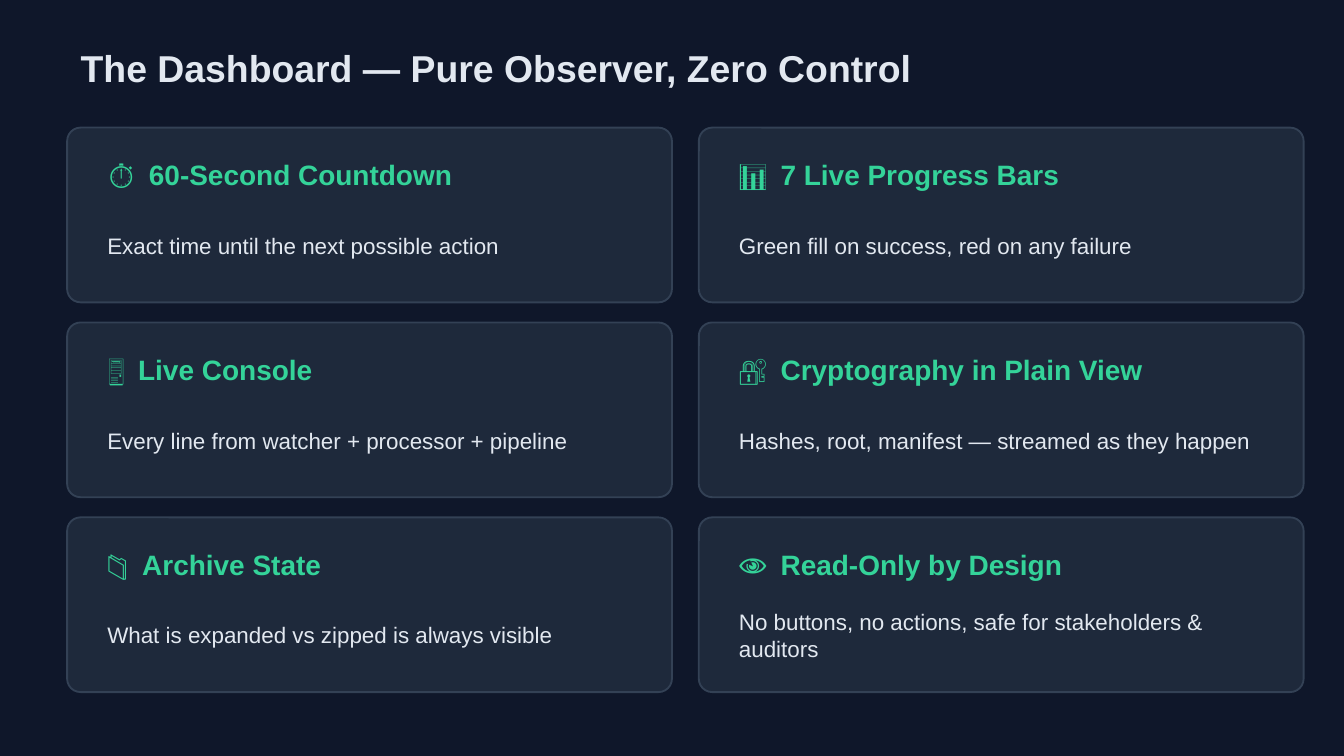
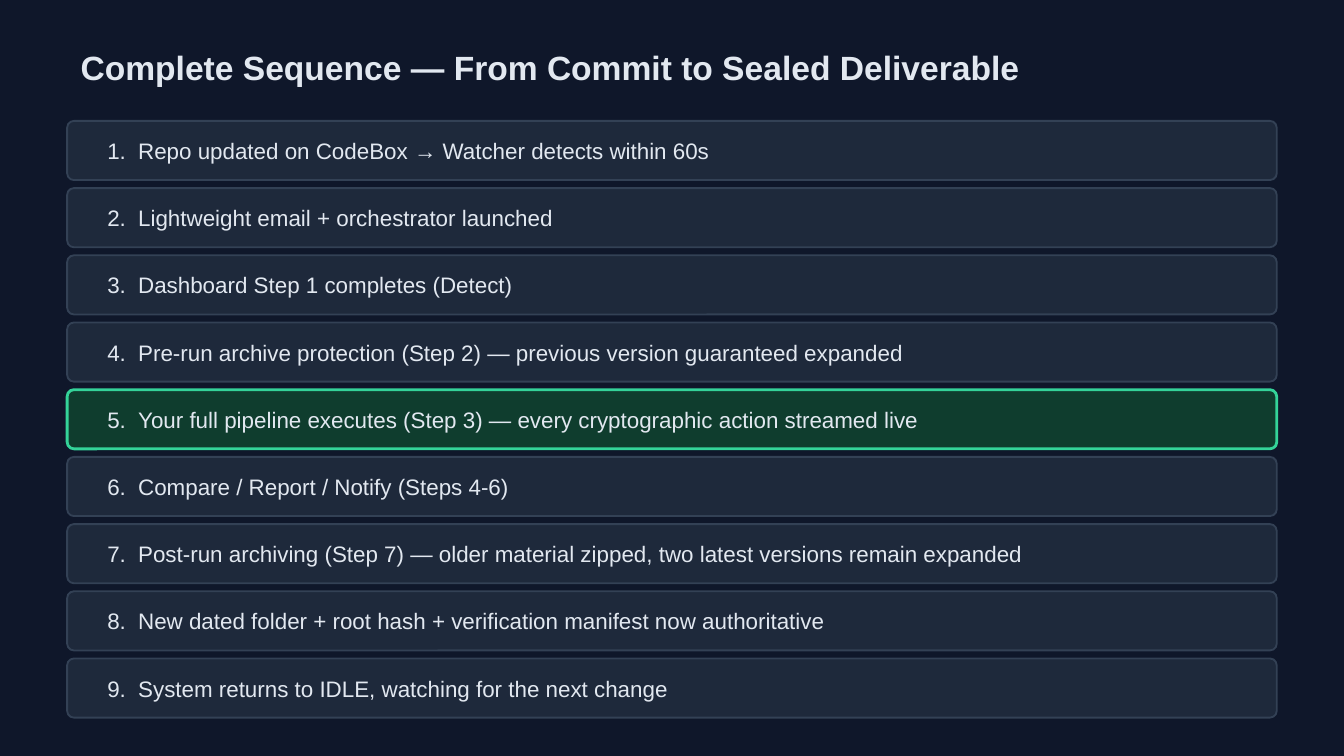
from lxml import etree
from pptx import Presentation
from pptx.dml.color import RGBColor
from pptx.enum import shapes, text
from pptx.oxml.ns import qn
from pptx.util import Inches, Pt

NAVY, SLATE, EDGE = "0F172A", "1E293B", "334155"
PALE, GREEN, FOREST = "E2E8F0", "34D399", "0F3D2E"
FONT = "Arial"
LEFT, PAD, RADIUS = 0.5, 0.2, 0.1 / 2

# icon, gap from icon to heading, heading, detail
CARDS = [
    ("⏱", 0.31, "60-Second Countdown", "Exact time until the next possible action"),
    ("📊", 0.31, "7 Live Progress Bars", "Green fill on success, red on any failure"),
    ("🖥", 0.23, "Live Console", "Every line from watcher + processor + pipeline"),
    ("🔐", 0.31, "Cryptography in Plain View",
     "Hashes, root, manifest — streamed as they happen"),
    ("📁", 0.26, "Archive State", "What is expanded vs zipped is always visible"),
    ("👁", 0.31, "Read-Only by Design",
     "No buttons, no actions, safe for stakeholders & auditors"),
]
STEPS = [
    "Repo updated on CodeBox → Watcher detects within 60s",
    "Lightweight email + orchestrator launched",
    "Dashboard Step 1 completes (Detect)",
    "Pre-run archive protection (Step 2) — previous version guaranteed expanded",
    "Your full pipeline executes (Step 3) — every cryptographic action streamed live",
    "Compare / Report / Notify (Steps 4-6)",
    "Post-run archiving (Step 7) — older material zipped, two latest versions remain expanded",
    "New dated folder + root hash + verification manifest now authoritative",
    "System returns to IDLE, watching for the next change",
]
KEY_STEP = 5


def color(code):
    return RGBColor.from_string(code)


def write(shape, words, size, code=PALE, bold=False, tab=None):
    """Fill a shape with one left-aligned line; tab is a stop in inches."""
    frame = shape.text_frame
    frame.word_wrap = True
    frame.auto_size = text.MSO_AUTO_SIZE.NONE
    frame.vertical_anchor = text.MSO_ANCHOR.MIDDLE
    para = frame.paragraphs[0]
    para.text = words
    para.alignment = text.PP_ALIGN.LEFT
    if tab:
        stops = etree.SubElement(para._p.get_or_add_pPr(), qn("a:tabLst"))
        etree.SubElement(stops, qn("a:tab"), pos=str(Inches(tab)), algn="l")
    font = para.font
    font.name, font.size, font.bold = FONT, Pt(size), bold
    font.color.rgb = color(code)


def add_text(slide, box, *args, **style):
    write(slide.shapes.add_textbox(*map(Inches, box)), *args, **style)


def add_panel(slide, box, fill=SLATE, edge=EDGE, width=1):
    kind = shapes.MSO_SHAPE.ROUNDED_RECTANGLE
    panel = slide.shapes.add_shape(kind, *map(Inches, box))
    panel.adjustments[0] = 2 * RADIUS / box[3] if box[3] > 1 else RADIUS / box[3]
    panel.shadow.inherit = False
    panel.fill.solid()
    panel.fill.fore_color.rgb = color(fill)
    panel.line.color.rgb = color(edge)
    panel.line.width = Pt(width)


def add_slide(deck, title, size):
    slide = deck.slides.add_slide(deck.slide_layouts[5])
    slide.background.fill.solid()
    slide.background.fill.fore_color.rgb = color(NAVY)
    head = slide.shapes.title
    head.left, head.top, head.width, head.height = map(Inches, (LEFT, 0.25, 9, 0.5))
    write(head, title, size, bold=True)
    return slide


def add_cards(slide):
    wide, high, top = 4.5, 1.3, 0.95
    for i, (icon, gap, head, detail) in enumerate(CARDS):
        row, col = divmod(i, 2)
        x, y = LEFT + col * (wide + 0.2), top + row * (high + 0.15)
        inner = wide - 2 * PAD
        add_panel(slide, (x, y, wide, high))
        add_text(slide, (x + PAD, y + 0.15, inner, 0.4), f"{icon}\t{head}", 15,
                 GREEN, bold=True, tab=gap)
        add_text(slide, (x + PAD, y + 0.6, inner, 0.55), detail, 12)


def add_steps(slide):
    wide, high, top, pitch = 9, 0.44, 0.9, 0.5
    for n, step in enumerate(STEPS, 1):
        y = top + (n - 1) * pitch
        look = (FOREST, GREEN, 1.5) if n == KEY_STEP else ()
        add_panel(slide, (LEFT, y, wide, high), *look)
        add_text(slide, (LEFT + PAD, y + 0.06, wide - 2 * PAD, 0.32),
                 f"{n}.\t{step}", 12, tab=0.23)


def main():
    deck = Presentation()
    deck.slide_width, deck.slide_height = Inches(10), Inches(5.625)
    add_cards(add_slide(deck, "The Dashboard — Pure Observer, Zero Control", 20))
    add_steps(add_slide(deck, "Complete Sequence — From Commit to Sealed Deliverable", 18))
    deck.save("out.pptx")


if __name__ == "__main__":
    main()
